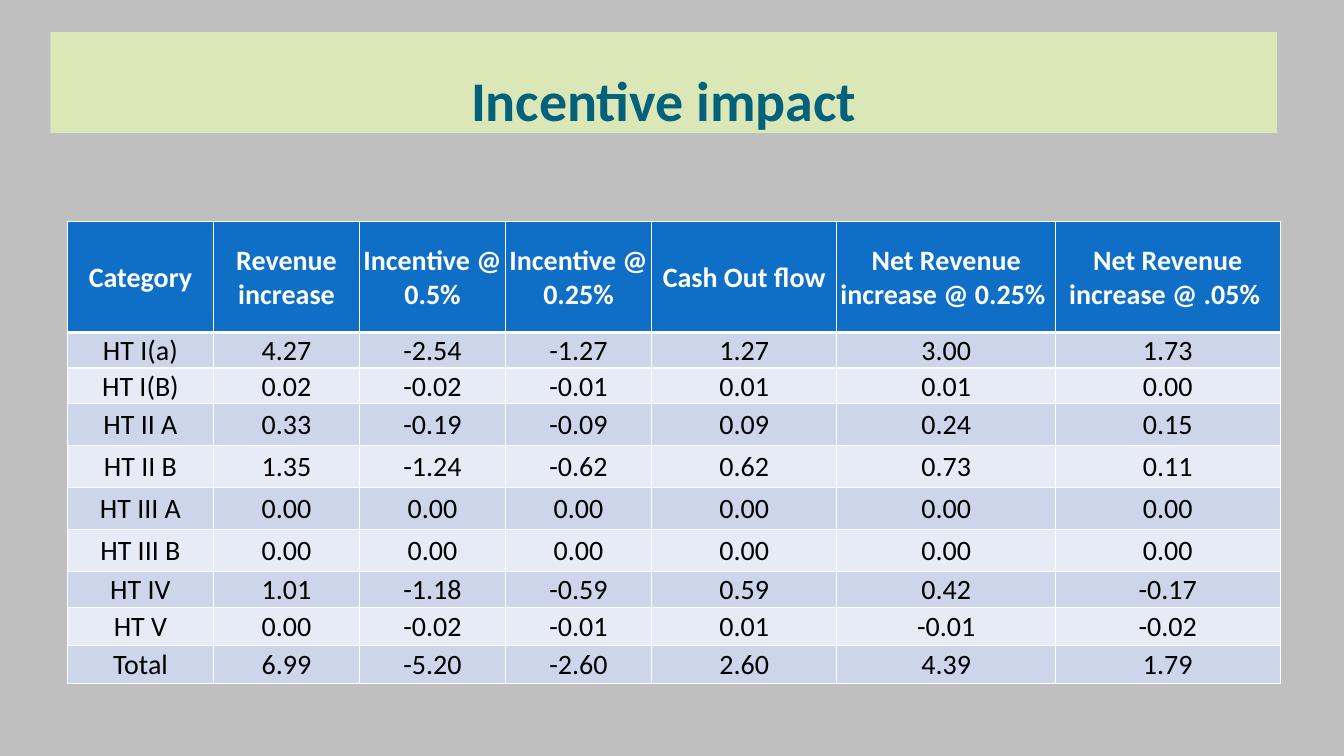
from dataclasses import dataclass

from lxml.etree import SubElement
from pptx import Presentation
from pptx.dml.color import RGBColor
from pptx.enum.shapes import MSO_SHAPE as Preset
from pptx.enum.text import MSO_ANCHOR as Anchor, PP_ALIGN as Align
from pptx.oxml.ns import qn
from pptx.slide import Slide
from pptx.table import _Cell as Cell
from pptx.text.text import TextFrame
from pptx.util import Cm, Pt


@dataclass(frozen=True)
class Theme:
    font: str = "Calibri"
    title_size: int = 40
    table_size: int = 20
    background: str = "BFBFBF"
    title_fill: str = "DBE7B6"
    title_text: str = "04617B"
    header_fill: str = "0F6FC6"
    header_text: str = "FFFFFF"
    body_text: str = "000000"
    odd_fill: str = "CCD5EA"
    even_fill: str = "E7EBF5"
    border: str = "FFFFFF"
    thin_border: int = 1
    thick_border: int = 3


@dataclass(frozen=True)
class Column:
    heading: str
    width: float


@dataclass(frozen=True)
class Category:
    height: float
    values: tuple[str, ...]


@dataclass(frozen=True)
class CellStyle:
    fill: str
    text: str
    bold: bool
    top: int
    bottom: int


THEME = Theme()
HEADER_HEIGHT = 2.79
COLUMNS = (
    Column("Category", 3.68),
    Column("Revenue increase", 3.68),
    Column("Incentive @ 0.5%", 3.68),
    Column("Incentive @ 0.25%", 3.68),
    Column("Cash Out flow", 4.67),
    Column("Net Revenue increase @ 0.25% ", 5.51),
    Column("Net Revenue increase @ .05% ", 5.66),
)
CATEGORIES = (
    Category(0.81, ("HT I(a)", "4.27", "-2.54", "-1.27", "1.27", "3.00", "1.73")),
    Category(0.86, ("HT I(B)", "0.02", "-0.02", "-0.01", "0.01", "0.01", "0.00")),
    Category(1.06, ("HT II A", "0.33", "-0.19", "-0.09", "0.09", "0.24", "0.15")),
    Category(1.06, ("HT II B", "1.35", "-1.24", "-0.62", "0.62", "0.73", "0.11")),
    Category(1.06, ("HT III A", "0.00", "0.00", "0.00", "0.00", "0.00", "0.00")),
    Category(1.06, ("HT III B", "0.00", "0.00", "0.00", "0.00", "0.00", "0.00")),
    Category(0.81, ("HT IV", "1.01", "-1.18", "-0.59", "0.59", "0.42", "-0.17")),
    Category(0.97, ("HT V", "0.00", "-0.02", "-0.01", "0.01", "-0.01", "-0.02")),
    Category(0.94, ("Total", "6.99", "-5.20", "-2.60", "2.60", "4.39", "1.79")),
)


def write_text(frame: TextFrame, text: str, size: int, color: str, bold: bool) -> None:
    paragraph = frame.paragraphs[0]
    paragraph.alignment = Align.CENTER
    run = paragraph.add_run()
    run.text = text
    run.font.name = THEME.font
    run.font.size = Pt(size)
    run.font.bold = bold
    run.font.color.rgb = RGBColor.from_string(color)


def draw_title(slide: Slide, text: str) -> None:
    banner = slide.shapes.add_shape(
        Preset.RECTANGLE, Cm(1.27), Cm(0.81), Cm(30.91), Cm(2.54)
    )
    banner.shadow.inherit = False
    banner.fill.solid()
    banner.fill.fore_color.rgb = RGBColor.from_string(THEME.title_fill)
    banner.line.fill.background()
    frame = banner.text_frame
    frame.word_wrap = True
    frame.vertical_anchor = Anchor.BOTTOM
    frame.margin_left = frame.margin_right = frame.margin_bottom = 0
    frame.margin_top = Cm(0.13)
    write_text(frame, text, THEME.title_size, THEME.title_text, True)


def draw_border(cell: Cell, side: str, width: int) -> None:
    properties = cell._tc.get_or_add_tcPr()
    line = SubElement(properties, qn(f"a:ln{side}"), w=str(Pt(width)))
    fill = SubElement(line, qn("a:solidFill"))
    SubElement(fill, qn("a:srgbClr"), val=THEME.border)


def draw_cell(cell: Cell, text: str, style: CellStyle) -> None:
    draw_border(cell, "L", THEME.thin_border)
    draw_border(cell, "R", THEME.thin_border)
    draw_border(cell, "T", style.top)
    draw_border(cell, "B", style.bottom)
    cell.fill.solid()
    cell.fill.fore_color.rgb = RGBColor.from_string(style.fill)
    cell.vertical_anchor = Anchor.MIDDLE
    cell.margin_left = cell.margin_right = cell.margin_top = Cm(0.03)
    cell.margin_bottom = 0
    write_text(cell.text_frame, text, THEME.table_size, style.text, style.bold)


def row_style(index: int) -> CellStyle:
    thin, thick = THEME.thin_border, THEME.thick_border
    if index == 0:
        return CellStyle(THEME.header_fill, THEME.header_text, True, thin, thick)
    fill = THEME.odd_fill if index % 2 else THEME.even_fill
    top = thick if index == 1 else thin
    return CellStyle(fill, THEME.body_text, False, top, thin)


def draw_table(slide: Slide) -> None:
    header = Category(HEADER_HEIGHT, tuple(column.heading for column in COLUMNS))
    rows = (header, *CATEGORIES)
    width = sum(column.width for column in COLUMNS)
    height = sum(row.height for row in rows)
    table = slide.shapes.add_table(
        len(rows), len(COLUMNS), Cm(1.7), Cm(5.59), Cm(width), Cm(height)
    ).table
    for table_column, column in zip(table.columns, COLUMNS):
        table_column.width = Cm(column.width)
    for index, row in enumerate(rows):
        table.rows[index].height = Cm(row.height)
        style = row_style(index)
        for cell, text in zip(table.rows[index].cells, row.values):
            draw_cell(cell, text, style)


def main() -> None:
    presentation = Presentation()
    presentation.slide_width = Cm(33.87)
    presentation.slide_height = Cm(19.05)
    slide = presentation.slides.add_slide(presentation.slide_layouts[6])
    slide.background.fill.solid()
    slide.background.fill.fore_color.rgb = RGBColor.from_string(THEME.background)
    draw_title(slide, "Incentive impact")
    draw_table(slide)
    presentation.save("out.pptx")


if __name__ == "__main__":
    main()
